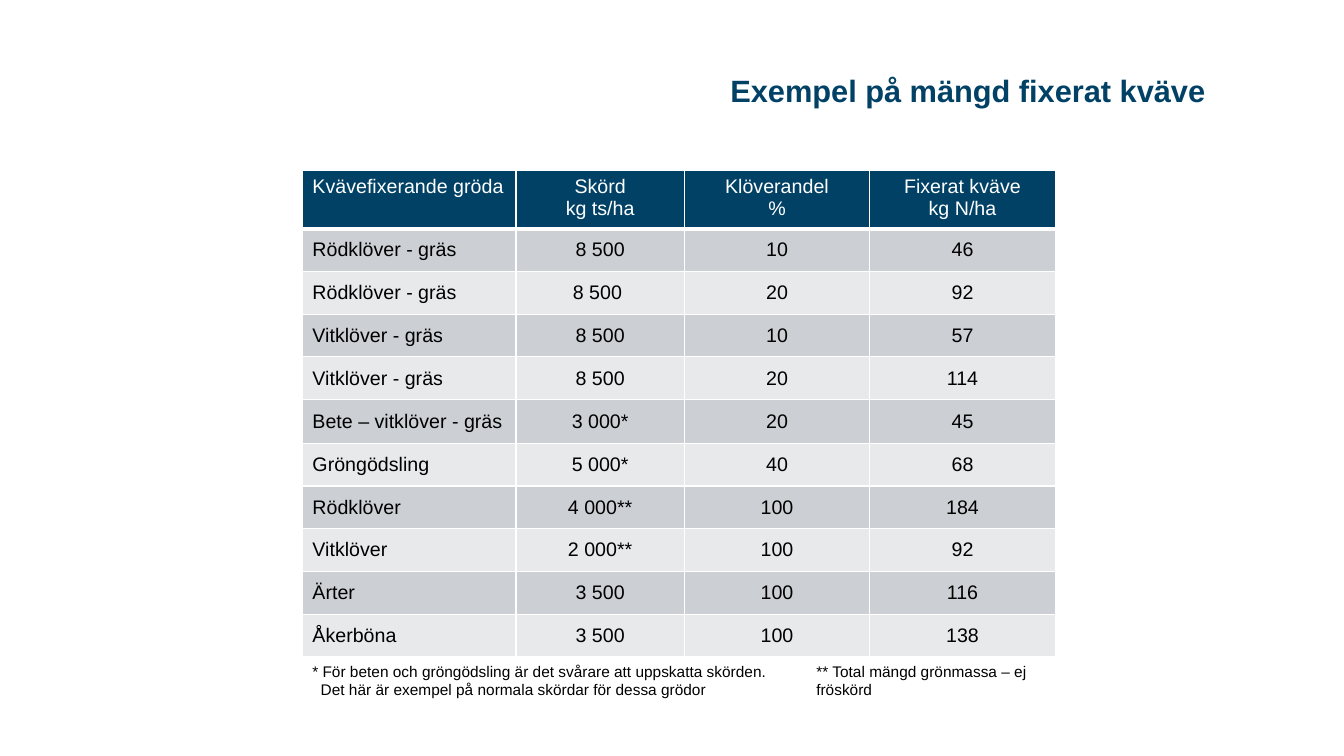
from typing import NamedTuple

from lxml.etree import SubElement
from pptx import Presentation
from pptx.dml.color import RGBColor
from pptx.enum.text import MSO_ANCHOR as Anchor, PP_ALIGN as Align
from pptx.oxml.ns import qn
from pptx.util import Inches, Pt

WIDE, HIGH = Inches(13.33), Inches(7.5)
NAVY = RGBColor(0x00, 0x41, 0x65)
DARK = RGBColor(0xCC, 0xCF, 0xD3)
LIGHT = RGBColor(0xE7, 0xE9, 0xEA)
WHITE = RGBColor(0xFF, 0xFF, 0xFF)
BLACK = RGBColor(0x00, 0x00, 0x00)


class Box(NamedTuple):
    """Left, top, width and height in percent of the slide."""
    x: float
    y: float
    w: float
    h: float


class Note(NamedTuple):
    box: Box
    text: str


class Crop(NamedTuple):
    name: str
    crop: str
    share: str
    fixed: str
    high: float = 5.65


HEAD = Crop("Kvävefixerande gröda", "Skörd\nkg ts/ha", "Klöverandel\n%",
            "Fixerat kväve\nkg N/ha", 7.73)
CROPS = [
    Crop("Rödklöver - gräs", "8 500", "10", "46"),
    Crop("Rödklöver - gräs", "8 500 ", "20", "92"),
    Crop("Vitklöver - gräs", "8 500", "10", "57"),
    Crop("Vitklöver - gräs", "8 500", "20", "114"),
    Crop("Bete – vitklöver - gräs", "3 000*", "20", "45", 5.8),
    Crop("Gröngödsling", "5 000*", "40", "68"),
    Crop("Rödklöver", "4 000**", "100", "184"),
    Crop("Vitklöver", "2 000**", "100", "92"),
    Crop("Ärter", "3 500", "100", "116"),
    Crop("Åkerböna", "3 500", "100", "138"),
]
COLS = [15.9, 12.52, 13.8, 13.8]
NOTES = [
    Note(Box(22.5, 86.93, 36.38, 6.27),
         "* För beten och gröngödsling är det svårare att uppskatta skörden.\n"
         "Det här är exempel på normala skördar för dessa grödor"),
    Note(Box(60, 86.93, 19.2, 6.27), "** Total mängd grönmassa – ej fröskörd"),
]


def across(part: float) -> int:
    return round(WIDE * part / 100)


def down(part: float) -> int:
    return round(HIGH * part / 100)


def place(box: Box) -> tuple[int, int, int, int]:
    return across(box.x), down(box.y), across(box.w), down(box.h)


def write(frame, text: str, *, size: float, color: RGBColor = BLACK,
          bold: bool = False, align: Align = Align.LEFT,
          space: float = 1, inset: float = 0) -> None:
    """Fill a frame, one paragraph a line; inset (points) moves later lines in."""
    for row, line in enumerate(text.split("\n")):
        para = frame.add_paragraph() if row else frame.paragraphs[0]
        if row and inset:
            para._p.get_or_add_pPr().set("marL", str(Pt(inset)))
        para.alignment, para.line_spacing = align, space
        run = para.add_run()
        run.text = line
        font = run.font
        font.name, font.size, font.bold = "Arial", Pt(size), bold
        font.color.rgb = color


def edge(cell, base: float) -> None:
    """Draw white cell borders; base is the width of the lower one."""
    props = cell._tc.get_or_add_tcPr()
    for side, width in zip("LRTB", (1, 1, 1, base)):
        line = SubElement(props, qn(f"a:ln{side}"), w=str(Pt(width)))
        fill = SubElement(line, qn("a:solidFill"))
        SubElement(fill, qn("a:srgbClr"), val=str(WHITE))


def draw_table(slide) -> None:
    rows = [HEAD, *CROPS]
    box = Box(22.5, 22.53, sum(COLS), sum(row.high for row in rows))
    table = slide.shapes.add_table(len(rows), len(COLS), *place(box)).table
    table.horz_banding = False
    for col, width in zip(table.columns, COLS):
        col.width = across(width)
    for r, row in enumerate(rows):
        table.rows[r].height = down(row.high)
        for c, text in enumerate(row[:len(COLS)]):
            cell = table.cell(r, c)
            edge(cell, 1 if r else 3)
            cell.fill.solid()
            cell.fill.fore_color.rgb = (DARK if r % 2 else LIGHT) if r else NAVY
            cell.vertical_anchor = Anchor.MIDDLE if r else Anchor.TOP
            write(cell.text_frame, text, size=14, color=BLACK if r else WHITE,
                  align=Align.CENTER if c else Align.LEFT)


def main() -> None:
    deck = Presentation()
    deck.slide_width, deck.slide_height = WIDE, HIGH
    slide = deck.slides.add_slide(deck.slide_layouts[5])
    title = slide.shapes.title
    title.left, title.top, title.width, title.height = place(
        Box(27.3, 8.27, 63.15, 7.87))
    title.text_frame.vertical_anchor = Anchor.MIDDLE
    write(title.text_frame, "Exempel på mängd fixerat kväve", size=22,
          color=NAVY, bold=True, align=Align.RIGHT, space=0.9)
    draw_table(slide)
    for note in NOTES:
        frame = slide.shapes.add_textbox(*place(note.box)).text_frame
        frame.word_wrap = True
        write(frame, note.text, size=11, inset=6)
    deck.save("out.pptx")


if __name__ == "__main__":
    main()
